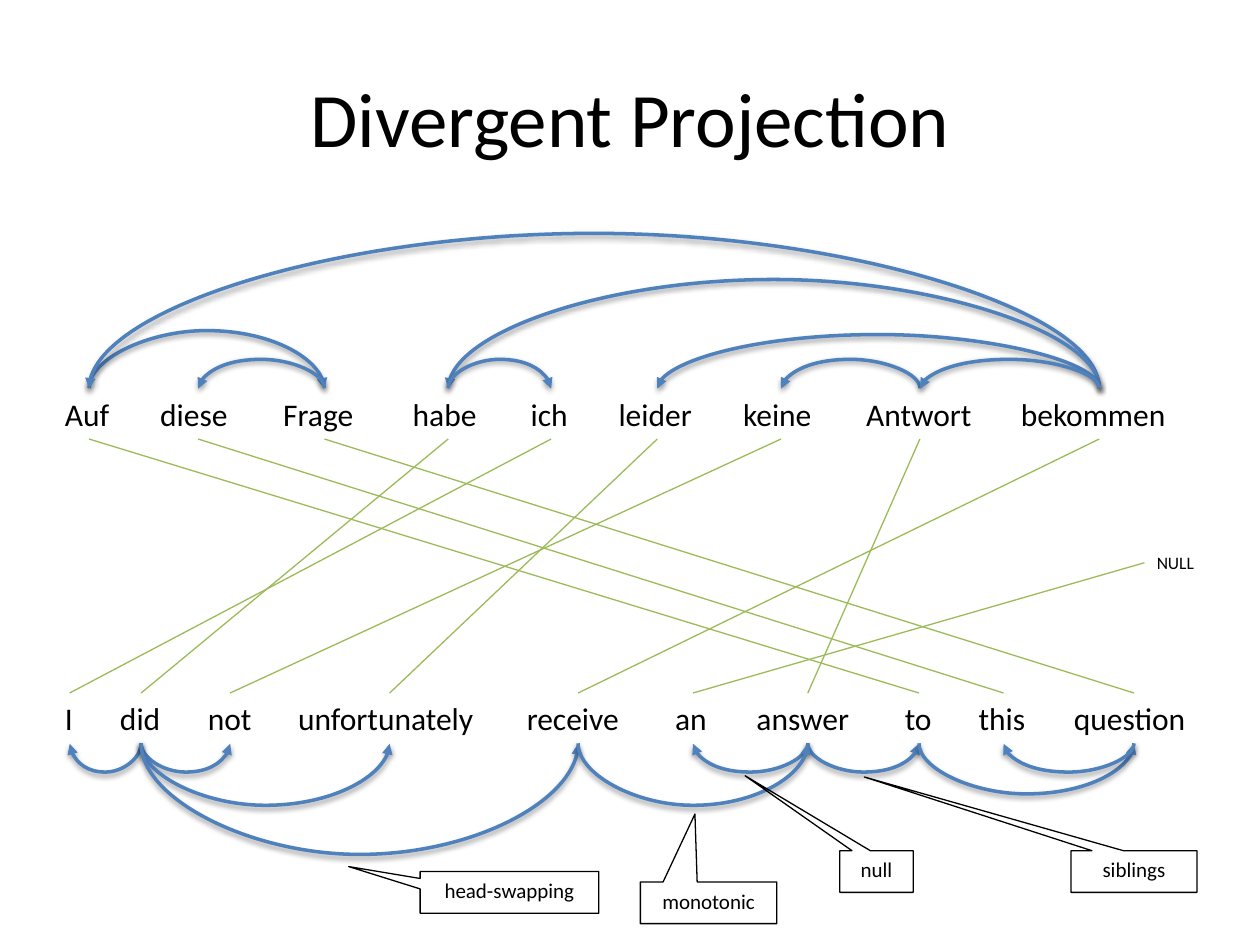
from lxml import etree
from pptx import Presentation
from pptx import util as u
from pptx.dml.color import RGBColor
from pptx.enum import shapes, text
from pptx.oxml import ns

BLACK = RGBColor(0x00, 0x00, 0x00)
BLUE = RGBColor(0x4F, 0x81, 0xBD)
GREEN = RGBColor(0x9B, 0xBB, 0x59)

LEFT, HIGH = 1.06, 1.02
GERMAN_TOP, ENGLISH_TOP = 7.83, 13.97
DEPTH = 0.01  # near-zero extent of an arc's frame, in cm

GERMAN = [("Auf", 1.47), ("diese", 2.03), ("Frage", 2.16), ("habe", 1.93),
          ("ich", 1.32), ("leider", 2.06), ("keine", 2.03),
          ("Antwort", 2.67), ("bekommen", 3.66)]
ENGLISH = [("I", 0.69), ("did", 1.35), ("not", 1.4), ("unfortunately", 4.19),
           ("receive", 2.57), ("an", 1.22), ("answer", 2.57), ("to", 1.07),
           ("this", 1.5), ("question", 2.92)]

LINKS = [("Frage", "question"), ("diese", "this"), ("Auf", "to"),
         ("leider", "unfortunately"), ("keine", "not"), ("habe", "did"),
         ("Antwort", "answer"), ("bekommen", "receive"), ("ich", "I")]

# head, dependent, height of the arc
GERMAN_ARCS = [("Auf", "Frage", 1.16), ("Frage", "diese", 0.58),
               ("bekommen", "Auf", 3.12), ("Antwort", "keine", 0.58),
               ("bekommen", "habe", 2.19), ("bekommen", "leider", 1.08),
               ("bekommen", "Antwort", 0.58), ("habe", "ich", 0.58)]
ENGLISH_ARCS = [("did", "I", 0.58), ("did", "not", 0.58),
                ("did", "unfortunately", 1.25), ("did", "receive", 2.24),
                ("answer", "an", 0.58), ("answer", "to", 0.58),
                ("to", "question", 1.02), ("question", "this", 0.58),
                ("receive", "answer", 1.25)]

# label, left, top, width, tip offset as a share of the box
NOTES = [("monotonic", 12.91, 17.78, 2.75, (-0.1, -2.13)),
         ("null", 16.93, 17.15, 1.48, (-1.79, -2.3)),
         ("head-swapping", 8.47, 17.57, 3.6, (-0.9, -0.62)),
         ("siblings", 21.59, 17.15, 2.54, (-2.14, -2.27))]


def assign(obj, **values):
    for name, value in values.items():
        setattr(obj, name, value)


def write(shape, words, size, align, **frame):
    body = shape.text_frame
    assign(body, **frame)
    para = body.paragraphs[0]
    para.alignment = align
    run = para.add_run()
    run.text = words
    assign(run.font, size=u.Pt(size), name="Calibri")
    run.font.color.rgb = BLACK


def stroke(shape, color, width):
    shape.line.color.rgb = color
    shape.line.width = u.Pt(width)


def child(parent, tag, **values):
    return etree.SubElement(parent, ns.qn(tag),
                            {name: str(value) for name, value in values.items()})


def label(slide, words, box, size):
    shape = slide.shapes.add_textbox(*map(u.Cm, box))
    write(shape, words, size, text.PP_ALIGN.LEFT, word_wrap=False,
          auto_size=text.MSO_AUTO_SIZE.SHAPE_TO_FIT_TEXT)
    return shape


def title(slide, words, box):
    shape = slide.shapes.add_textbox(*map(u.Cm, box))
    write(shape, words, 44, text.PP_ALIGN.CENTER, word_wrap=True,
          vertical_anchor=text.MSO_ANCHOR.MIDDLE)


def sentence(slide, words, left, top, gap):
    """Set the words in a row with equal gaps; return their boxes by word."""
    boxes = {}
    for word, width in words:
        boxes[word] = label(slide, word, (left, top, width, HIGH), 18)
        left += width + gap
    return boxes


def link(slide, first, side, last):
    """Join a side of the first box to the top of the last."""
    line = slide.shapes.add_connector(shapes.MSO_CONNECTOR.STRAIGHT, 0, 0, 0, 0)
    line.begin_connect(first, side)
    line.end_connect(last, 0)
    stroke(line, GREEN, 0.75)
    child(line.element.spPr, "a:effectLst")


def arc(slide, start, end, y, rise):
    """Curve between two x places, turned a quarter; a positive rise sags."""
    mid, half, thin = (start + end) // 2, (start - end) // 2, u.Cm(DEPTH)
    curve = slide.shapes.add_connector(
        shapes.MSO_CONNECTOR.CURVE, mid - thin // 2, y - half,
        mid + thin // 2, y + half)
    stroke(curve, BLUE, 2)
    props = curve.element.spPr
    props.find(ns.qn("a:xfrm")).set("rot", "5400000")
    guides = props.find(ns.qn("a:prstGeom")).find(ns.qn("a:avLst"))
    child(guides, "a:gd", name="adj1", fmla=f"val {round(rise / DEPTH * 100000)}")
    child(props.find(ns.qn("a:ln")), "a:tailEnd", type="triangle")
    shade = child(child(props, "a:effectLst"), "a:outerShdw", blurRad=40000,
                  dist=20000, dir=5400000, rotWithShape=0)
    child(child(shade, "a:srgbClr", val="000000"), "a:alpha", val=38000)


def arcs(slide, boxes, items, y, sign):
    def middle(word):
        return boxes[word].left + boxes[word].width // 2

    for head, word, rise in items:
        arc(slide, middle(head), middle(word), u.Cm(y), sign * rise)


def note(slide, words, box, tip):
    shape = slide.shapes.add_shape(
        shapes.MSO_SHAPE.RECTANGULAR_CALLOUT, *map(u.Cm, box))
    shape.shadow.inherit = False
    shape.fill.background()
    stroke(shape, BLACK, 0.75)
    for place, value in enumerate(tip):
        shape.adjustments[place] = value
    write(shape, words, 12, text.PP_ALIGN.CENTER, word_wrap=True,
          vertical_anchor=text.MSO_ANCHOR.TOP)


def main():
    deck = Presentation()
    assign(deck, slide_width=u.Cm(25.4), slide_height=u.Cm(19.05))
    slide = deck.slides.add_slide(deck.slide_layouts[6])
    title(slide, "Divergent Projection", (1.27, 0.76, 22.86, 3.18))

    german = sentence(slide, GERMAN, LEFT, GERMAN_TOP, 0.45)
    english = sentence(slide, ENGLISH, LEFT, ENGLISH_TOP, 0.42)
    for source, target in LINKS:
        link(slide, german[source], 2, english[target])
    arcs(slide, german, GERMAN_ARCS, GERMAN_TOP, -1)
    arcs(slide, english, ENGLISH_ARCS, ENGLISH_TOP + HIGH, 1)

    null = label(slide, "NULL", (23.07, 11, 1.42, 0.69), 10)
    link(slide, null, 1, english["an"])
    for words, left, top, width, tip in NOTES:
        note(slide, words, (left, top, width, 0.84), tip)
    deck.save("out.pptx")


if __name__ == "__main__":
    main()
